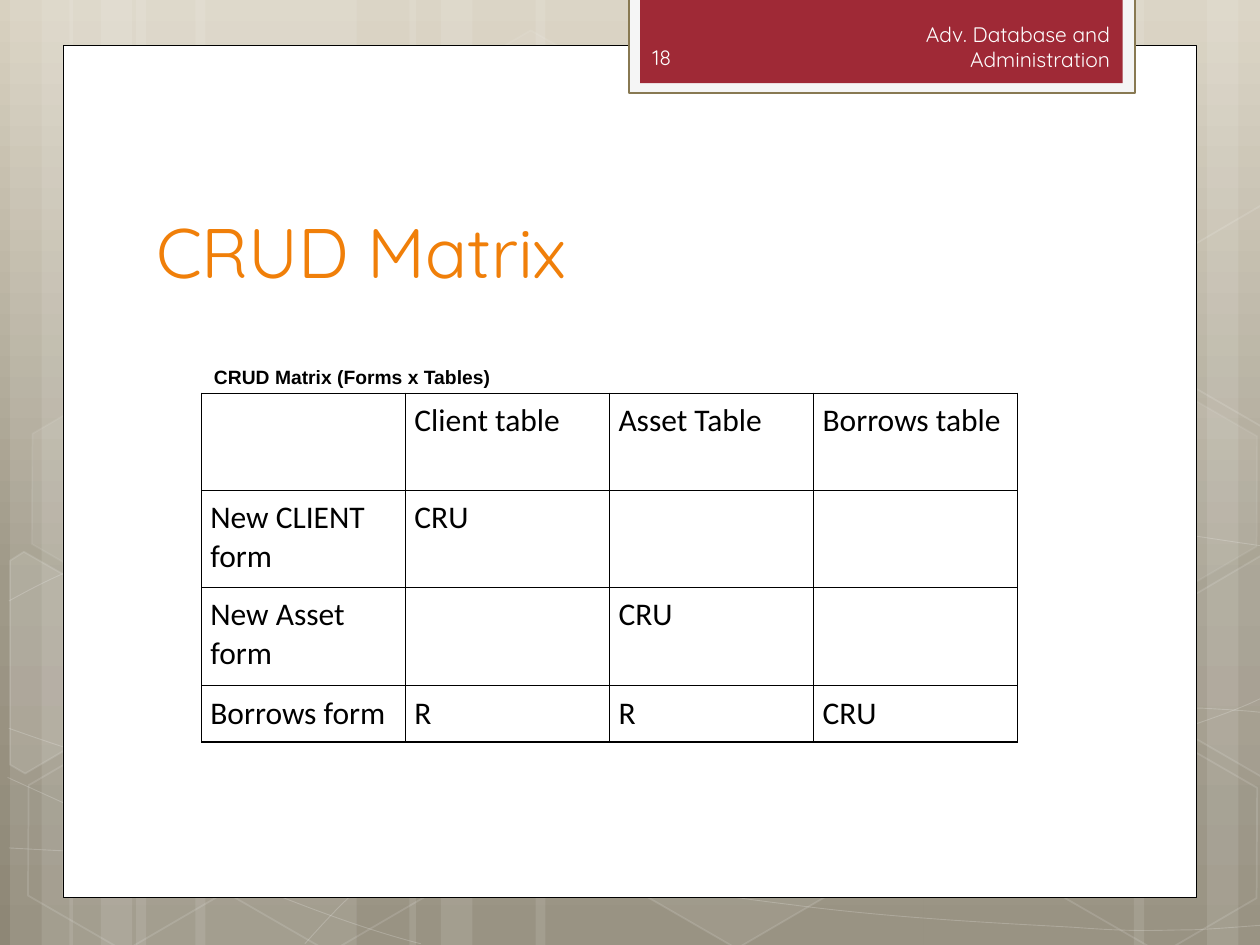
from copy import deepcopy
from dataclasses import dataclass
from lxml.etree import SubElement
from pptx import Presentation
from pptx.dml.color import RGBColor
from pptx.enum.shapes import MSO_SHAPE
from pptx.enum.text import MSO_ANCHOR, PP_ALIGN
from pptx.oxml import parse_xml
from pptx.oxml.ns import nsdecls, qn
from pptx.util import Inches, Pt


@dataclass(frozen=True)
class Theme:
    white: str = "FFFFFF"
    black: str = "000000"
    orange: str = "F07F09"
    red: str = "9F2936"
    frame: str = "F5F5F5"
    tan: str = "887952"
    light: str = "FEFEFE"
    backdrop: tuple = ((0, "D8D1C0"), (62, "9F9988"), (100, "8E8776"))
    head_font: str = "Quicksand"
    body_font: str = "Calibri"
    caption_font: str = "Arial"
    title: int = 40
    body: int = 18
    small: int = 12
    caption: int = 11


T = Theme()

MATRIX = [
    ["", "Client table", "Asset Table", "Borrows table"],
    ["New CLIENT form", "CRU", "", ""],
    ["New Asset form", "", "CRU", ""],
    ["Borrows form", "R", "R", "CRU"],
]
ROW_HEIGHTS = [0.77, 0.77, 0.78, 0.45]
COL_WIDTH = 1.62

LABELS = [
    ("CRUD Matrix", (1.14, 1.12, 7.68, 1.25), T.head_font, T.title, T.orange, False, PP_ALIGN.LEFT, MSO_ANCHOR.BOTTOM),
    ("Adv. Database and Administration", (6.58, 0.17, 2.33, 0.4), T.head_font, T.small, T.light, False, PP_ALIGN.RIGHT, MSO_ANCHOR.MIDDLE),
    ("18", (5.08, 0.25, 1.46, 0.4), T.head_font, T.small, T.light, False, PP_ALIGN.LEFT, MSO_ANCHOR.MIDDLE),
    ("CRUD Matrix (Forms x Tables)", (1.6, 2.85, 3, 0.28), T.caption_font, T.caption, T.black, True, PP_ALIGN.LEFT, MSO_ANCHOR.MIDDLE),
]

BANDS = [
    (1.08, 1.75), (0.08, 0.5), (0.33, 0.83), (1.55, 1.75), (0.55, 0.5), (0.8, 0.83),
    (7.33, 1.75), (9.58, 0.5), (9, 0.83), (4.25, 3.08), (3.25, 0.5), (3.5, 0.83),
]
CURVES = [
    [(0.07, 6.73), (0.61, 6.76), (1.15, 6.79), (1.9, 6.78), (2.65, 6.77), (3.58, 6.75), (4.58, 6.65),
     (5.58, 6.55), (7, 6.36), (7.92, 6.17), (8.83, 5.98), (9.77, 5.68), (10.07, 5.51)],
    [(0.07, 4.77), (0.36, 4.61), (0.65, 4.46), (1.21, 4.31), (1.78, 4.16), (2.59, 3.94), (3.47, 3.87),
     (4.36, 3.8), (5.44, 3.79), (6.54, 3.87), (7.64, 3.95), (9.47, 4.26), (10.07, 4.34)],
    [(0.06, 6.17), (1.27, 6.72), (2.47, 7.27), (3.34, 7.49)],
    [(0.07, 5.78), (0.38, 5.89), (0.7, 6), (1.28, 6.16), (1.86, 6.31), (2.73, 6.56), (3.57, 6.73),
     (4.4, 6.9), (5.45, 7.08), (6.28, 7.18), (7.11, 7.29), (8, 7.33), (8.53, 7.36),
     (9.05, 7.4), (9.19, 7.38), (9.45, 7.38), (9.71, 7.37), (9.89, 7.35), (10.07, 7.34)],
    [(2.42, 7.49), (2.6, 7.29), (2.78, 7.09), (3.02, 6.91), (3.26, 6.73), (3.6, 6.53), (3.88, 6.39),
     (4.16, 6.25), (4.33, 6.19), (4.7, 6.09), (5.06, 5.99), (5.73, 5.85), (6.08, 5.78),
     (6.44, 5.71), (6.49, 5.71), (6.8, 5.69), (7.11, 5.66), (7.6, 5.63), (7.94, 5.62),
     (8.29, 5.61), (8.86, 5.62), (8.86, 5.62), (9.08, 5.62), (9.31, 5.62), (9.53, 5.62),
     (9.71, 5.63), (9.88, 5.64), (9.97, 5.65), (10.06, 5.66), (10.03, 5.65), (10.06, 5.66)],
]
HEXAGONS = [
    (3.34, 0.36, 4, 8), (4.97, 5.89, 6, 12), (0.11, 5.91, 0, 12), (0.14, 3.12, 7, 8),
    (1.74, 5.92, 0, 12), (8.34, 5.93, 0, 12), (8.34, 3.14, 7, 8),
]
CUT_HEXAGONS = [
    ([(0.08, 4.45), (0.19, 4.38), (0.96, 4.82), (0.95, 5.7), (0.2, 6.14), (0.08, 6.07)], 10),
    ([(9.26, 4.85), (10.01, 4.41), (10.09, 4.46), (10.09, 6.13), (10.02, 6.17), (9.26, 5.73)], 4),
    ([(9.26, 2.07), (10.01, 1.63), (10.1, 1.68), (10.09, 3.35), (10.02, 3.39), (9.26, 2.95)], 0),
]
PANELS = [
    ((0.5, 0.36, 9, 6.76), T.white, T.black, 0.5),
    ((4.99, -0.02, 4.02, 0.76), T.frame, T.tan, 1.25),
    ((5.08, -0.02, 3.83, 0.68), T.red, None, 0),
]


def rgb(value):
    return RGBColor.from_string(value)


def set_alpha(sp, where, percent):
    if percent < 100:
        for color in sp.element.xpath(f"./p:spPr/{where}a:solidFill/a:srgbClr"):
            SubElement(color, qn("a:alpha")).set("val", str(percent * 1000))


def style(sp, fill=None, fill_alpha=100, line=None, width=1, line_alpha=100):
    sp.shadow.inherit = False
    if fill and fill_alpha:
        sp.fill.solid()
        sp.fill.fore_color.rgb = rgb(fill)
        set_alpha(sp, "", fill_alpha)
    else:
        sp.fill.background()
    if line:
        sp.line.color.rgb = rgb(line)
        sp.line.width = Pt(width)
        set_alpha(sp, "a:ln/", line_alpha)
    else:
        sp.line.fill.background()


def add_box(s, kind, box):
    return s.shapes.add_shape(kind, *map(Inches, box))


def add_outline(s, points, close):
    corners = [(Inches(x), Inches(y)) for x, y in points]
    builder = s.shapes.build_freeform(*corners[0], scale=1.0)
    builder.add_line_segments(corners[1:], close=close)
    return builder.convert_to_shape()


def add_curve(s, points):
    sp = add_outline(s, points, False)
    segments = sp.element.xpath(".//a:lnTo")
    for i in range(0, len(segments), 3):
        bezier = SubElement(segments[i].getparent(), qn("a:cubicBezTo"))
        for segment in segments[i:i + 3]:
            bezier.append(segment[0])
            segment.getparent().remove(segment)
    return sp


def write(p, text, font, size, color, bold=False):
    r = p.add_run()
    r.text = text
    r.font.name, r.font.size, r.font.bold = font, Pt(size), bold
    r.font.color.rgb = rgb(color)


def add_backdrop(s):
    fill = s.background.fill
    fill.gradient()
    fill.gradient_angle = 270
    stops = s.element.xpath(".//a:gsLst")[0]
    stops.insert(1, deepcopy(stops[0]))
    for stop, (position, color) in zip(fill.gradient_stops, T.backdrop):
        stop.position = position / 100
        stop.color.rgb = rgb(color)
    for left, width in BANDS:
        style(add_box(s, MSO_SHAPE.RECTANGLE, (left, 0, width, 7.5)), T.white, 10)
    for points in CURVES:
        style(add_curve(s, points), line=T.white, width=0.5, line_alpha=20)
    for left, top, alpha, line_alpha in HEXAGONS:
        sp = add_box(s, MSO_SHAPE.HEXAGON, (left, top, 1.75, 1.52))
        sp.adjustments[0], sp.adjustments[1] = 0.285, 1.155
        sp.rotation = 30
        style(sp, T.white, alpha, T.white, 1, line_alpha)
    for points, alpha in CUT_HEXAGONS:
        style(add_outline(s, points, True), T.white, alpha, T.white, 1, 12)
    for box, fill_color, line, width in PANELS:
        style(add_box(s, MSO_SHAPE.RECTANGLE, box), fill_color, 100, line, width)


def add_label(s, text, box, font, size, color, bold, align, anchor):
    tf = s.shapes.add_textbox(*map(Inches, box)).text_frame
    tf.word_wrap = True
    tf.vertical_anchor = anchor
    p = tf.paragraphs[0]
    p.alignment = align
    write(p, text, font, size, color, bold)


def add_matrix(s):
    rows, cols = len(MATRIX), len(MATRIX[0])
    size = (1.6, 3.12, cols * COL_WIDTH, sum(ROW_HEIGHTS))
    table = s.shapes.add_table(rows, cols, *map(Inches, size)).table
    table.first_row = table.horz_banding = False
    for col in table.columns:
        col.width = Inches(COL_WIDTH)
    for row, height, texts in zip(table.rows, ROW_HEIGHTS, MATRIX):
        row.height = Inches(height)
        for cell, text in zip(row.cells, texts):
            cell.margin_left = cell.margin_right = cell.margin_top = cell.margin_bottom = Inches(0.07)
            cell.fill.background()
            if text:
                write(cell.text_frame.paragraphs[0], text, T.body_font, T.body, T.black)
    for props in s.element.xpath(".//a:tcPr"):
        for i, side in enumerate(("lnL", "lnR", "lnT", "lnB")):
            props.insert(i, parse_xml(
                f'<a:{side} {nsdecls("a")} w="{Pt(0.75)}"><a:solidFill>'
                f'<a:srgbClr val="{T.black}"/></a:solidFill></a:{side}>'))


prs = Presentation()
prs.slide_width, prs.slide_height = Inches(10), Inches(7.5)
s = prs.slides.add_slide(prs.slide_layouts[6])
add_backdrop(s)
add_matrix(s)
for label in LABELS:
    add_label(s, *label)
prs.save("out.pptx")
